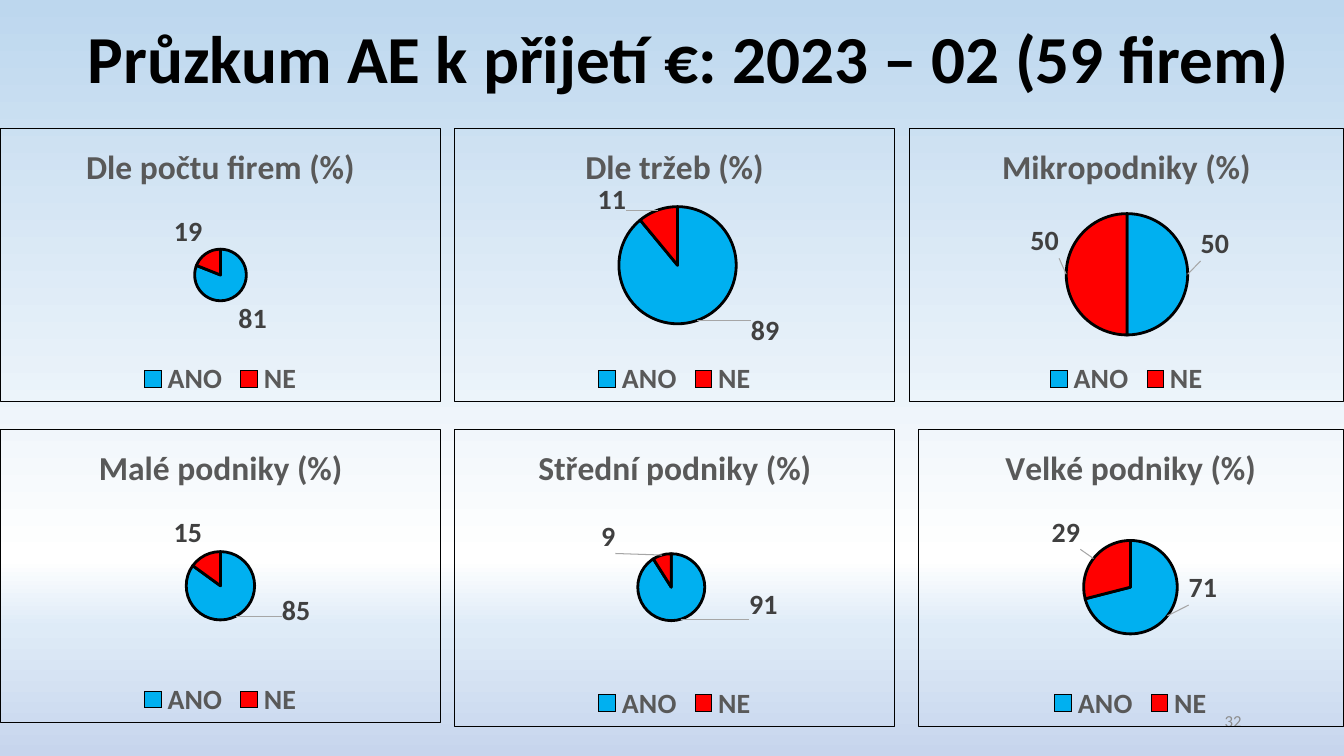
import pptx
import pptx.chart.data
import pptx.dml.color
import pptx.enum.chart
import pptx.enum.text
import pptx.oxml
import pptx.oxml.ns
import pptx.util

Pt = pptx.util.Pt
FONT = "Calibri"
NS = pptx.oxml.ns.nsdecls("a", "c", "p")
STOPS = [(0, "BDD7EE"), (74, "FFFFFF"), (83, "DEEBF7"), (100, "C7D5ED")]
FILLS = ["00B0F0", "FF0000"]

# Box; heading and its width; values; pie centre and diameter; label shifts
PIES = [
    ((0, 91.5, 315, 196), "Dle počtu firem (%)", 192, (81, 19),
     (157.5, 105, 37), (None, None)),
    ((324.5, 91.5, 315, 196), "Dle tržeb (%)", 128, (89, 11),
     (159.5, 98, 84), ((37, -9), (-21, 9))),
    ((649.5, 91.5, 310.5, 196), "Mikropodniky (%)", 178, (50, 50),
     (155.5, 104.5, 87), ((5, -22), (-1, -24))),
    ((0, 306.5, 315, 210), "Malé podniky (%)", 174, (85, 15),
     (157.5, 112, 49), ((31, -20), None)),
    ((324.5, 306.5, 315, 212.5), "Střední podniky (%)", 195, (91, 9),
     (155, 113, 48), ((48, -27), (-32, 3))),
    ((655.5, 306.5, 304.5, 212.5), "Velké podniky (%)", 179, (71, 29),
     (152, 113, 67), ((12, -35), (-6, -4))),
]


def color(code):
    return pptx.dml.color.RGBColor.from_string(code)


def style(font, size, code, bold=True):
    font.name = FONT
    font.size = Pt(size)
    font.bold = bold
    font.color.rgb = color(code)


def node(tag, body="", attrs=""):
    return pptx.oxml.parse_xml(f"<{tag} {NS} {attrs}>{body}</{tag}>")


def stroke(code, width):
    return (f'<a:ln w="{Pt(width)}"><a:solidFill><a:srgbClr val="{code}"/>'
            "</a:solidFill></a:ln>")


def place(parent, index, parts):
    """Give a chart part a manual layout."""
    for old in parent.findall(pptx.oxml.ns.qn("c:layout")):
        parent.remove(old)
    body = "".join(f'<c:{tag} val="{val}"/>' for tag, val in parts)
    parent.insert(index, node(
        "c:layout", f"<c:manualLayout>{body}</c:manualLayout>"))


def backdrop(slide):
    stops = "".join(
        f'<a:gs pos="{pos * 1000}"><a:srgbClr val="{code}"/></a:gs>'
        for pos, code in STOPS)
    slide.element.cSld.insert(0, node(
        "p:bg", f"<p:bgPr><a:gradFill><a:gsLst>{stops}</a:gsLst>"
        '<a:lin ang="5400000" scaled="0"/></a:gradFill>'
        "<a:effectLst/></p:bgPr>"))


def label(slide, box, text, size, code, bold, wrap):
    frame = slide.shapes.add_textbox(*map(Pt, box)).text_frame
    frame.word_wrap = wrap
    para = frame.paragraphs[0]
    para.text = text
    style(para.font, size, code, bold)
    return frame


def pie(slide, box, head, width, vals, disc, shifts):
    wide, high = box[2:]
    data = pptx.chart.data.CategoryChartData(number_format="0")
    data.categories = ["ANO", "NE"]
    data.add_series("Series 1", vals)
    chart = slide.shapes.add_chart(
        pptx.enum.chart.XL_CHART_TYPE.PIE, *map(Pt, box), data).chart
    style(chart.font, 20, "000000")

    # Heading
    chart.has_title = True
    para = chart.chart_title.text_frame.paragraphs[0]
    para.text = head
    style(para.font, 24, "595959")
    place(chart.chart_title._element, 1, [
        ("xMode", "edge"), ("yMode", "edge"),
        ("x", round(((wide - width) / 2 - 4.5) / wide, 3)),
        ("y", round(7 / high, 3))])

    # Legend
    chart.has_legend = True
    chart.legend.position = pptx.enum.chart.XL_LEGEND_POSITION.BOTTOM
    chart.legend.include_in_layout = False
    style(chart.legend.font, 20, "595959")

    # Disc
    mid, row, size = disc
    plot = chart.plots[0]
    plot.vary_by_categories = True
    place(plot._element.getparent(), 0, [
        ("layoutTarget", "inner"), ("xMode", "edge"), ("yMode", "edge"),
        ("x", round((mid - size / 2) / wide, 4)),
        ("y", round((row - size / 2) / high, 4)),
        ("w", round(size / wide, 4)), ("h", round(size / high, 4))])

    # Slices and their labels
    series = plot.series[0]
    for index, (fill, shift) in enumerate(zip(FILLS, shifts)):
        point = series.points[index]
        point.format.fill.solid()
        point.format.fill.fore_color.rgb = color(fill)
        point.format.line.color.rgb = color("000000")
        point.format.line.width = Pt(2)
        tag = point.data_label
        style(tag.font, 20, "404040")
        tag.position = pptx.enum.chart.XL_LABEL_POSITION.OUTSIDE_END
        if shift:
            place(tag._dLbl, 1, [("x", round(shift[0] / wide, 3)),
                                 ("y", round(shift[1] / high, 3))])
    series.data_labels._element.append(node(
        "c:leaderLines", f"<c:spPr>{stroke('A6A6A6', 0.75)}</c:spPr>"))

    # Frame
    body = chart._chartSpace.find(pptx.oxml.ns.qn("c:chart"))
    body.addprevious(node("c:roundedCorners", attrs='val="0"'))
    body.addnext(node("c:spPr", "<a:noFill/>" + stroke("000000", 0.75)))


def main():
    deck = pptx.Presentation()
    deck.slide_width, deck.slide_height = Pt(960), Pt(540)
    slide = deck.slides.add_slide(deck.slide_layouts[6])
    backdrop(slide)

    # Page number
    page = label(slide, (678, 500.5, 216, 29), "32", 12, "8C8C8C",
                 False, True)
    page.vertical_anchor = pptx.enum.text.MSO_ANCHOR.MIDDLE
    page.paragraphs[0].alignment = pptx.enum.text.PP_ALIGN.RIGHT

    # Title
    label(slide, (55.5, 8, 883.5, 87),
          "Průzkum AE k přijetí €: 2023 – 02 (59 firem)", 48, "000000",
          True, False)

    # Charts
    for item in PIES:
        pie(slide, *item)
    deck.save("out.pptx")


if __name__ == "__main__":
    main()
